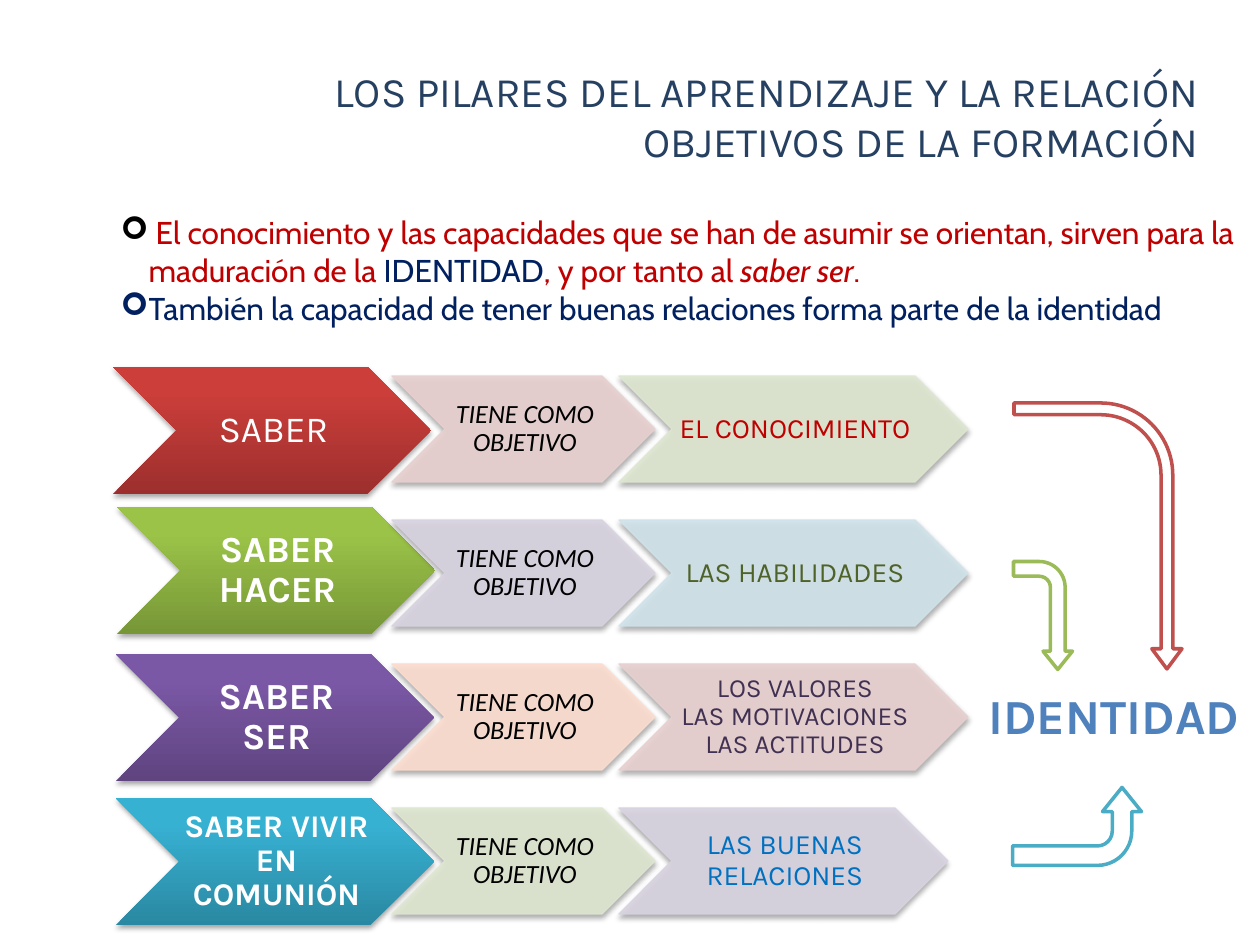
from lxml import etree
from pptx import Presentation
from pptx.dml.color import RGBColor
from pptx.enum.shapes import MSO_SHAPE
from pptx.enum.text import MSO_ANCHOR, MSO_AUTO_SIZE, PP_ALIGN
from pptx.oxml.ns import qn
from pptx.util import Emu, Pt

CHEVRON, BENT_ARROW = MSO_SHAPE.CHEVRON, MSO_SHAPE.BENT_ARROW
TOP, MIDDLE = MSO_ANCHOR.TOP, MSO_ANCHOR.MIDDLE
CENTER, LEFT, RIGHT = PP_ALIGN.CENTER, PP_ALIGN.LEFT, PP_ALIGN.RIGHT
NO_FIT = MSO_AUTO_SIZE.NONE

COLORS = {
    "title": "254061", "red": "C00000", "navy": "002060", "black": "000000",
    "white": "FFFFFF", "identity": "4F81BD",
    "rose": "E8D0D0", "sage": "DEE7D1", "lilac": "D8D3E0", "sky": "D0E3EA",
    "peach": "FCDDCF", "olive": "4F6228", "plum": "403152", "blue": "0070C0",
    "red dark": "9C2F2D", "red light": "CB3E3A",
    "green dark": "779737", "green light": "9BC348",
    "purple dark": "5F4480", "purple light": "7B58A6",
    "teal dark": "2A88A2", "teal light": "37B1D2",
    "red line": "C0504D", "green line": "9BBB59", "teal line": "4BACC6",
}

TITLE = ["LOS PILARES DEL APRENDIZAJE Y LA RELACIÓN", "OBJETIVOS DE LA FORMACIÓN"]
POINTS = [
    [(" ", "black", False),
     ("El conocimiento y las capacidades que se han de asumir se orientan, "
      "sirven para la maduración de la ", "red", False),
     ("IDENTIDAD", "navy", False),
     (", y por tanto al ", "red", False),
     ("saber ser", "red", True),
     (".", "red", False)],
    [("También la capacidad de tener buenas relaciones forma parte de la identidad",
      "navy", False)],
]
LINK = "TIENE COMO OBJETIVO"

# pillar: text, size, bold, hue, left, top; link fill; goal: text, size, color, fill, width
ROWS = [
    (("SABER", 21, False, "red", 113, 367), "rose",
     ("EL CONOCIMIENTO", 16, "red", "sage", 349)),
    (("SABER HACER", 21, True, "green", 117, 507), "lilac",
     ("LAS HABILIDADES", 16, "olive", "sky", 349)),
    (("SABER SER", 21, True, "purple", 116, 654), "peach",
     ("LOS VALORES\vLAS MOTIVACIONES\vLAS ACTITUDES", 15, "plum", "rose", 349)),
    (("SABER VIVIR EN COMUNIÓN", 18, True, "teal", 116, 798), "sage",
     ("LAS BUENAS RELACIONES", 16, "blue", "lilac", 329)),
]
ARROWS = [
    ((989, 586, 108, 59), 90, False, (0.25, 0.25, 0.31, 0.44), "green line"),
    ((965, 452, 266, 168), 90, False, (0.07, 0.09, 0.12, 0.43), "red line"),
    ((1038, 762, 78, 129), 270, True, (0.25, 0.25, 0.31, 0.44), "teal line"),
]
ROW_TOP, ROW_PITCH, ROW_HEIGHT = 376, 144, 106


def px(length):
    return Emu(round(length * 914400 / 126))


def rgb(name):
    return RGBColor.from_string(COLORS[name])


def place(shape, *frame):
    shape.left, shape.top, shape.width, shape.height = map(px, frame)


def style(paragraph, face, size, color, bold=False, italic=False, align=CENTER):
    paragraph.alignment = align
    font = paragraph.font
    font.name, font.size, font.bold, font.italic = face, Pt(size), bold, italic
    font.color.rgb = rgb(color)


def add_alpha(parent, percent):
    for color in parent.iter(qn("a:srgbClr")):
        etree.SubElement(color, qn("a:alpha"), val=str(percent * 1000))


def add_chevron(slide, frame, text):
    shape = slide.shapes.add_shape(CHEVRON, *map(px, frame))
    shape.shadow.inherit = False
    effects = shape._element.spPr.find(qn("a:effectLst"))
    shadow = etree.SubElement(effects, qn("a:outerShdw"), blurRad=str(Pt(3.1)),
                              dist=str(Pt(1.8)), dir="5400000", rotWithShape="0")
    etree.SubElement(shadow, qn("a:srgbClr"), val=COLORS["black"])
    add_alpha(shadow, 35)
    box = shape.text_frame
    box.word_wrap, box.vertical_anchor = True, MIDDLE
    box.margin_left, box.margin_right = px(3), 0
    box.margin_top = box.margin_bottom = px(1)
    paragraph = box.paragraphs[0]
    paragraph.text = text
    paragraph.line_spacing = 0.9
    return shape, paragraph


def add_pillar(slide, text, size, bold, hue, left, top):
    shape, paragraph = add_chevron(slide, (left, top, 318, 127), text)
    style(paragraph, "Karla", size, "white", bold)
    shape.fill.gradient()
    shape.fill.gradient_angle = 90
    stops = shape.fill.gradient_stops
    for stop, tone, position in zip(stops, ("dark", "light"), (0, 0.8)):
        stop.color.rgb = rgb(f"{hue} {tone}")
        stop.position = position
    shape.line.fill.background()


def add_pale_chevron(slide, frame, text, fill):
    shape, paragraph = add_chevron(slide, frame, text)
    shape.fill.solid()
    shape.fill.fore_color.rgb = shape.line.color.rgb = rgb(fill)
    shape.line.width = Pt(0.75)
    properties = shape._element.spPr
    add_alpha(properties.find(qn("a:solidFill")), 90)
    add_alpha(properties.find(qn("a:ln")), 90)
    return paragraph


def add_title(slide):
    title = slide.shapes.title
    place(title, 158, 59, 1053, 115)
    box = title.text_frame
    box.auto_size, box.vertical_anchor = NO_FIT, TOP
    box.text = "\n".join(TITLE)
    for paragraph in box.paragraphs:
        style(paragraph, "Karla", 24, "title", align=RIGHT)


def add_points(slide):
    body = slide.placeholders[1]
    place(body, 108, 207, 1151, 127)
    box = body.text_frame
    box.auto_size, box.vertical_anchor = NO_FIT, TOP
    for index, spans in enumerate(POINTS):
        paragraph = box.add_paragraph() if index else box.paragraphs[0]
        properties = paragraph._p.get_or_add_pPr()
        properties.set("marL", str(px(28)))
        properties.set("indent", str(-px(28)))
        paragraph.space_before = Pt(0)
        etree.SubElement(properties, qn("a:buFont"), typeface="Wingdings")
        etree.SubElement(properties, qn("a:buChar"), char="➢")
        style(paragraph, "Cabin", 18, spans[0][1], align=LEFT)
        for text, color, italic in spans:
            span = paragraph.add_run()
            span.text = text
            span.font.color.rgb = rgb(color)
            span.font.italic = italic


def add_identity(slide):
    box = slide.shapes.add_textbox(*map(px, (971, 679, 286, 72))).text_frame
    box.word_wrap = False
    box.text = "IDENTIDAD"
    style(box.paragraphs[0], "Karla", 28, "identity", bold=True)


def add_arrow(slide, frame, rotation, flipped, adjustments, color):
    arrow = slide.shapes.add_shape(BENT_ARROW, *map(px, frame))
    arrow.shadow.inherit = False
    arrow.rotation = rotation
    if flipped:
        arrow._element.spPr.xfrm.set("flipV", "1")
    for index, value in enumerate(adjustments):
        arrow.adjustments[index] = value
    arrow.fill.solid()
    arrow.fill.fore_color.rgb = rgb("white")
    arrow.line.color.rgb = rgb(color)
    arrow.line.width = Pt(2)


def main():
    deck = Presentation()
    deck.slide_width, deck.slide_height = px(1260), px(945)
    slide = deck.slides.add_slide(deck.slide_layouts[1])
    add_title(slide)
    add_points(slide)
    for index, (pillar, link_fill, goal) in enumerate(ROWS):
        top = ROW_TOP + index * ROW_PITCH
        add_pillar(slide, *pillar)
        link = add_pale_chevron(slide, (392, top, 263, ROW_HEIGHT), LINK, link_fill)
        style(link, "Calibri", 15, "black", italic=True)
        text, size, color, fill, width = goal
        result = add_pale_chevron(slide, (619, top, width, ROW_HEIGHT), text, fill)
        style(result, "Karla", size, color)
    add_identity(slide)
    for arrow in ARROWS:
        add_arrow(slide, *arrow)
    deck.save("out.pptx")


if __name__ == "__main__":
    main()
